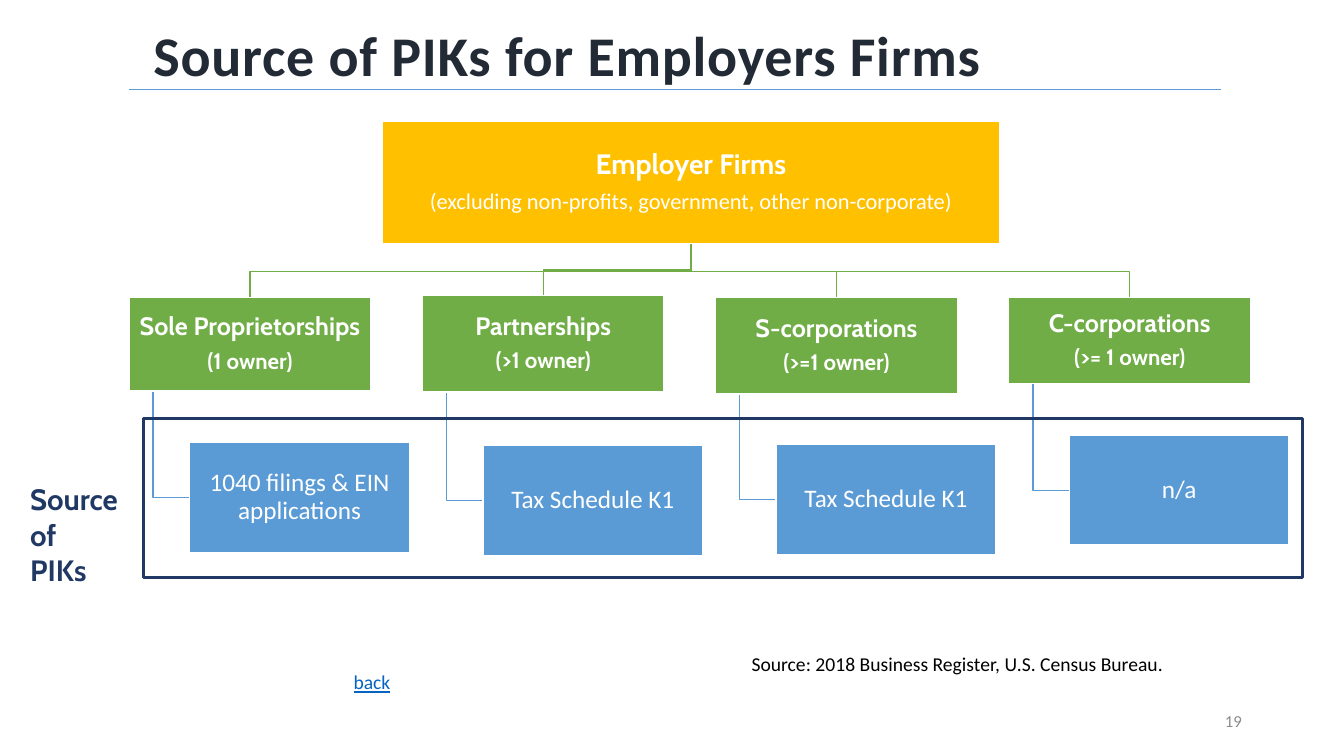
from dataclasses import dataclass

from lxml import etree
from pptx import Presentation
from pptx.dml.color import RGBColor
from pptx.enum import shapes, text
from pptx.oxml import ns
from pptx.util import Cm, Pt


@dataclass(frozen=True)
class Theme:
    body: str = "Calibri"
    accent: str = "Cabin"
    ink: str = "222A35"
    navy: str = "203864"
    gold: str = "FFC000"
    green: str = "70AD47"
    blue: str = "5B9BD5"
    link: str = "0563C1"
    grey: str = "8C8C8C"
    white: str = "FFFFFF"
    black: str = "000000"
    title: float = 40
    root: float = 20
    label: float = 21
    box: float = 18
    detail: float = 16
    note: float = 14
    number: float = 12


THEME = Theme()

TITLE = "Source of PIKs for Employers Firms"
ROOT = ("Employer Firms", "(excluding non-profits, government, other non-corporate)")
BRANCHES = [
    {"name": "Sole Proprietorships", "owners": "(1 owner)", "top": 7.49, "height": 2.36,
     "source": "1040 filings & EIN applications", "source_top": 11.15},
    {"name": "Partnerships", "owners": "(>1 owner)", "top": 7.44, "height": 2.44,
     "source": "Tax Schedule K1", "source_top": 11.23},
    {"name": "S-corporations", "owners": "(>=1 owner)", "top": 7.49, "height": 2.44,
     "source": "Tax Schedule K1", "source_top": 11.2},
    {"name": "C-corporations", "owners": "(>= 1 owner)", "top": 7.49, "height": 2.18,
     "source": "n/a", "source_top": 10.97},
]
CAPTIONS = [
    ("Source: 2018 Business Register, U.S. Census Bureau.", (18.69, 16.31, 14.5, 0.86),
     {"size": THEME.note, "color": THEME.black}),
    ("Source of PIKs", (0.51, 12.01, 2.74, 2.06),
     {"size": THEME.label, "color": THEME.navy, "name": THEME.accent, "bold": True}),
    ("back", (8.66, 16.76, 2.39, 0.86),
     {"size": THEME.note, "color": THEME.link, "underline": True}),
]

ROOT_PLACE = (9.63, 3.05, 15.57, 3.1)
FRAME_PLACE = (3.61, 10.54, 29.21, 4.01)
FIRST_LEFT, PITCH = 3.25, 7.39
BRANCH_WIDTH = 6.1
SOURCE_WIDTH, SOURCE_HEIGHT = 5.54, 2.77
SOURCE_INDENT, STEM_INDENT, BEND_GAP = 1.53, 0.61, 0.64


def lengths(values):
    return [Cm(value) for value in values]


def style(para, size, color, name=THEME.body, bold=False, underline=False):
    font = para.font
    font.name, font.size, font.bold = name, Pt(size), bold
    font.color.rgb = RGBColor.from_string(color)
    if underline:
        font.underline = True


def outline(shape, color, width):
    shape.line.color.rgb = RGBColor.from_string(color)
    shape.line.width = Pt(width)


def add_box(page, place, fill, lines):
    box = page.shapes.add_shape(shapes.MSO_SHAPE.RECTANGLE, *lengths(place))
    box.shadow.inherit = False
    box.fill.solid()
    box.fill.fore_color.rgb = RGBColor.from_string(fill)
    outline(box, THEME.white, 1)
    frame = box.text_frame
    frame.word_wrap = True
    frame.vertical_anchor = text.MSO_ANCHOR.MIDDLE
    frame.margin_left = frame.margin_right = Cm(0.03)
    frame.margin_top = frame.margin_bottom = Cm(0.03)
    for index, (words, size, name, bold) in enumerate(lines):
        para = frame.paragraphs[0] if index == 0 else frame.add_paragraph()
        para.text = words
        para.alignment = text.PP_ALIGN.CENTER
        para.line_spacing = 0.9
        para.space_after = Pt(round(size * 0.35, 1))
        style(para, size, THEME.white, name, bold)


def add_path(page, points, color):
    start, *rest = [tuple(lengths(point)) for point in points]
    builder = page.shapes.build_freeform(*start)
    builder.add_line_segments(rest, close=False)
    path = builder.convert_to_shape()
    path.shadow.inherit = False
    path.fill.background()
    outline(path, color, 1)


def add_caption(page, words, place, look):
    box = page.shapes.add_textbox(*lengths(place))
    box.text_frame.word_wrap = True
    para = box.text_frame.paragraphs[0]
    para.text = words
    style(para, **look)
    return box


def add_title(page):
    title = page.shapes.title
    title.left, title.top, title.width, title.height = lengths((3.61, 0.71, 27.94, 1.52))
    title.text_frame.vertical_anchor = text.MSO_ANCHOR.MIDDLE
    title.text_frame.auto_size = text.MSO_AUTO_SIZE.NONE
    para = title.text_frame.paragraphs[0]
    para.text = TITLE
    para.alignment = text.PP_ALIGN.LEFT
    para.line_spacing = 0.9
    style(para, THEME.title, THEME.ink, bold=True)
    para.runs[0]._r.get_or_add_rPr().set("spc", "60")

    rule = page.shapes.add_connector(
        shapes.MSO_CONNECTOR.STRAIGHT, *lengths((3.25, 2.26, 30.78, 2.26)))
    outline(rule, THEME.blue, 0.5)
    etree.SubElement(rule._element.spPr, ns.qn("a:effectLst"))


def add_tree(page):
    root_left, root_top, root_width, root_height = ROOT_PLACE
    root_center, root_bottom = root_left + root_width / 2, root_top + root_height
    add_box(page, ROOT_PLACE, THEME.gold, [
        (ROOT[0], THEME.root, THEME.accent, True),
        (ROOT[1], THEME.detail, THEME.body, False)])

    for index, branch in enumerate(BRANCHES):
        left, top = FIRST_LEFT + index * PITCH, branch["top"]
        center, bend = left + BRANCH_WIDTH / 2, top - BEND_GAP
        add_path(page, [(root_center, root_bottom), (root_center, bend),
                        (center, bend), (center, top)], THEME.green)
        stem, source_left = left + STEM_INDENT, left + SOURCE_INDENT
        source_middle = branch["source_top"] + SOURCE_HEIGHT / 2
        add_path(page, [(stem, top + branch["height"]), (stem, source_middle),
                        (source_left, source_middle)], THEME.blue)
        add_box(page, (left, top, BRANCH_WIDTH, branch["height"]), THEME.green, [
            (branch["name"], THEME.box, THEME.accent, True),
            (branch["owners"], THEME.detail, THEME.accent, True)])
        add_box(page, (source_left, branch["source_top"], SOURCE_WIDTH, SOURCE_HEIGHT),
                THEME.blue, [(branch["source"], THEME.box, THEME.body, False)])


def main():
    deck = Presentation()
    deck.slide_width, deck.slide_height = lengths((33.87, 19.05))
    page = deck.slides.add_slide(deck.slide_layouts[5])
    add_title(page)
    add_tree(page)
    for caption in CAPTIONS:
        add_caption(page, *caption)

    number = add_caption(page, "19", (23.93, 17.65, 7.62, 1.02),
                         {"size": THEME.number, "color": THEME.grey})
    number.text_frame.vertical_anchor = text.MSO_ANCHOR.MIDDLE
    number.text_frame.paragraphs[0].alignment = text.PP_ALIGN.RIGHT

    frame = page.shapes.add_shape(shapes.MSO_SHAPE.RECTANGLE, *lengths(FRAME_PLACE))
    frame.shadow.inherit = False
    frame.fill.background()
    outline(frame, THEME.navy, 2.25)
    deck.save("out.pptx")


if __name__ == "__main__":
    main()
